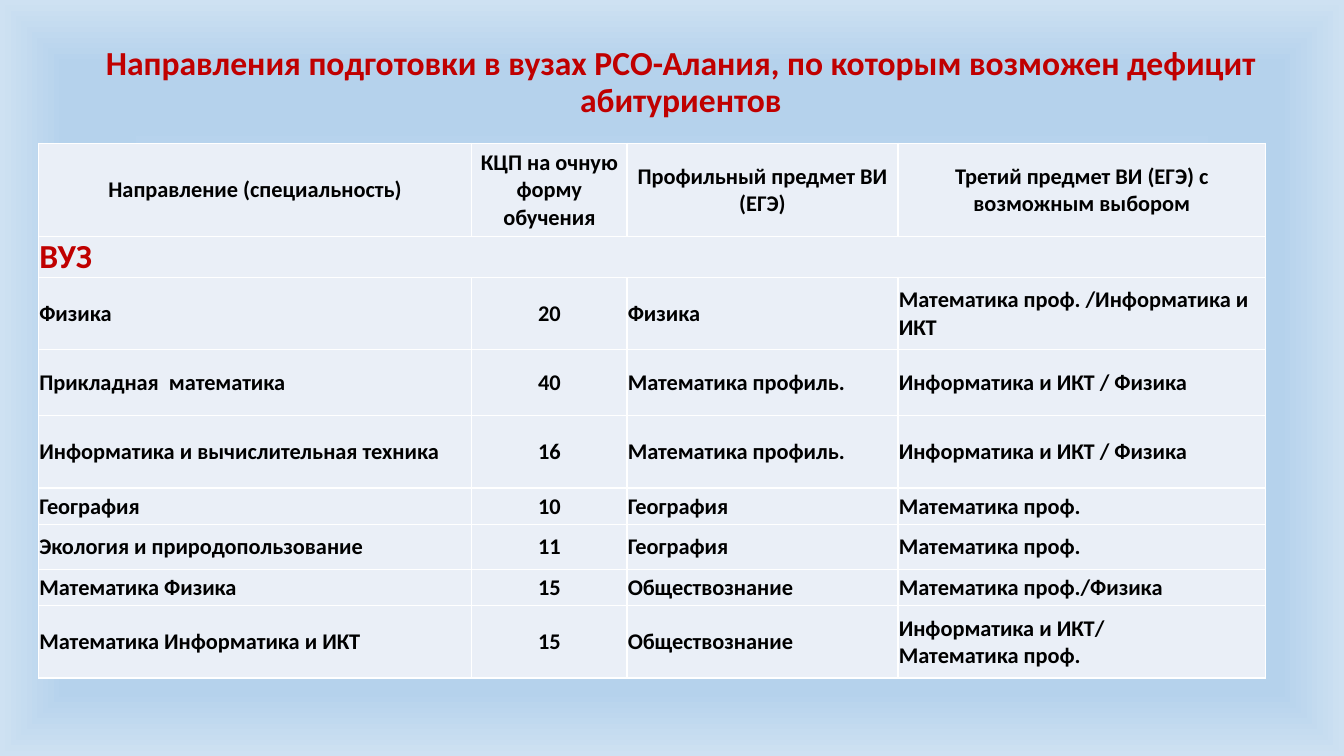
from dataclasses import dataclass

from lxml.etree import SubElement
from pptx import Presentation
from pptx.dml.color import RGBColor
from pptx.enum.text import MSO_ANCHOR, PP_ALIGN
from pptx.oxml import parse_xml
from pptx.oxml.ns import nsdecls, qn
from pptx.util import Cm, Pt


@dataclass(frozen=True)
class Theme:
    font: str = "Calibri"
    accent: str = "C00000"
    text: str = "000000"
    cell: str = "EAEFF7"
    border: str = "FFFFFF"
    glow: tuple = ((0, "F7FAFD"), (66, "B5D2EC"), (83, "B5D2EC"), (100, "CEE1F2"))
    heading_pt: int = 24
    body_pt: int = 16
    border_pt: int = 1


THEME = Theme()

TITLE = "Направления подготовки в вузах РСО-Алания, по которым возможен дефицит абитуриентов"
UNIVERSITY = "ВУЗ"
HEADER = ("Направление (специальность)", "КЦП на очную форму обучения",
          "Профильный предмет ВИ (ЕГЭ)", "Третий предмет ВИ (ЕГЭ) с возможным выбором")
# "\v" is a line break inside a paragraph
PROGRAMMES = (
    ("Физика", "20", "Физика", "Математика проф. /Информатика и ИКТ"),
    ("Прикладная  математика", "40", "Математика профиль.", "Информатика и ИКТ / Физика"),
    ("Информатика и вычислительная техника", "16", "Математика профиль.",
     "Информатика и ИКТ / Физика"),
    ("География", "10", "География", "Математика проф."),
    ("Экология и природопользование", "11", "География", "Математика проф."),
    ("Математика Физика", "15", "Обществознание", "Математика проф./Физика"),
    ("Математика Информатика и ИКТ", "15", "Обществознание",
     "Информатика и ИКТ/\vМатематика проф."),
)
COLUMN_WIDTHS = (10.92, 3.91, 6.83, 9.27)
ROW_HEIGHTS = (2.34, 0.91, 1.83, 1.65, 1.83, 0.91, 1.14, 0.91, 1.83)
QUOTA_COLUMN = 1


def set_background(slide):
    """Fill the slide with a gradient that runs from the centre to the edges."""
    stops = "".join(f'<a:gs pos="{pos * 1000}"><a:srgbClr val="{color}"/></a:gs>'
                    for pos, color in THEME.glow)
    bg = parse_xml(
        f'<p:bg {nsdecls("p", "a")}><p:bgPr><a:gradFill><a:gsLst>{stops}</a:gsLst>'
        '<a:path path="shape"><a:fillToRect l="50000" t="50000" r="50000" b="50000"/></a:path>'
        '</a:gradFill><a:effectLst/></p:bgPr></p:bg>')
    slide.element.cSld.insert(0, bg)


def write(tf, text, size, color, align):
    tf.text = text
    p = tf.paragraphs[0]
    p.alignment = align
    for r in p.runs:
        r.font.name = THEME.font
        r.font.size = Pt(size)
        r.font.bold = True
        r.font.color.rgb = RGBColor.from_string(color)


def add_title(slide, left, top, width, height):
    tf = slide.shapes.add_textbox(Cm(left), Cm(top), Cm(width), Cm(height)).text_frame
    tf.word_wrap = True
    tf.vertical_anchor = MSO_ANCHOR.MIDDLE
    write(tf, TITLE, THEME.heading_pt, THEME.accent, PP_ALIGN.CENTER)
    tf.paragraphs[0].line_spacing = 0.9


def style_cell(cell):
    cell.margin_left = cell.margin_right = cell.margin_top = Cm(0.02)
    cell.margin_bottom = 0
    cell.vertical_anchor = MSO_ANCHOR.MIDDLE
    tc_pr = cell._tc.get_or_add_tcPr()
    for side in ("a:lnL", "a:lnR", "a:lnT", "a:lnB"):
        ln = SubElement(tc_pr, qn(side), w=str(Pt(THEME.border_pt)))
        SubElement(SubElement(ln, qn("a:solidFill")), qn("a:srgbClr"), val=THEME.border)
    cell.fill.solid()
    cell.fill.fore_color.rgb = RGBColor.from_string(THEME.cell)


def add_programme_table(slide, left, top):
    rows = (HEADER, (UNIVERSITY,), *PROGRAMMES)
    table = slide.shapes.add_table(
        len(rows), len(HEADER), Cm(left), Cm(top),
        Cm(sum(COLUMN_WIDTHS)), Cm(sum(ROW_HEIGHTS))).table
    table.first_row = table.horz_banding = False
    for column, width in zip(table.columns, COLUMN_WIDTHS):
        column.width = Cm(width)
    for row, height in zip(table.rows, ROW_HEIGHTS):
        row.height = Cm(height)
    for cell in table.iter_cells():
        style_cell(cell)

    for i, texts in enumerate(rows):
        is_section = len(texts) == 1
        if is_section:
            table.cell(i, 0).merge(table.cell(i, len(HEADER) - 1))
        size, color = ((THEME.heading_pt, THEME.accent) if is_section
                       else (THEME.body_pt, THEME.text))
        for j, text in enumerate(texts):
            centred = texts is HEADER or j == QUOTA_COLUMN
            write(table.cell(i, j).text_frame, text, size, color,
                  PP_ALIGN.CENTER if centred else PP_ALIGN.LEFT)


def main():
    prs = Presentation()
    prs.slide_width, prs.slide_height = Cm(33.87), Cm(19.05)
    slide = prs.slides.add_slide(prs.slide_layouts[6])
    set_background(slide)
    add_title(slide, 0.46, 0, 33.4, 4.19)
    add_programme_table(slide, 0.97, 3.61)
    prs.save("out.pptx")


if __name__ == "__main__":
    main()
